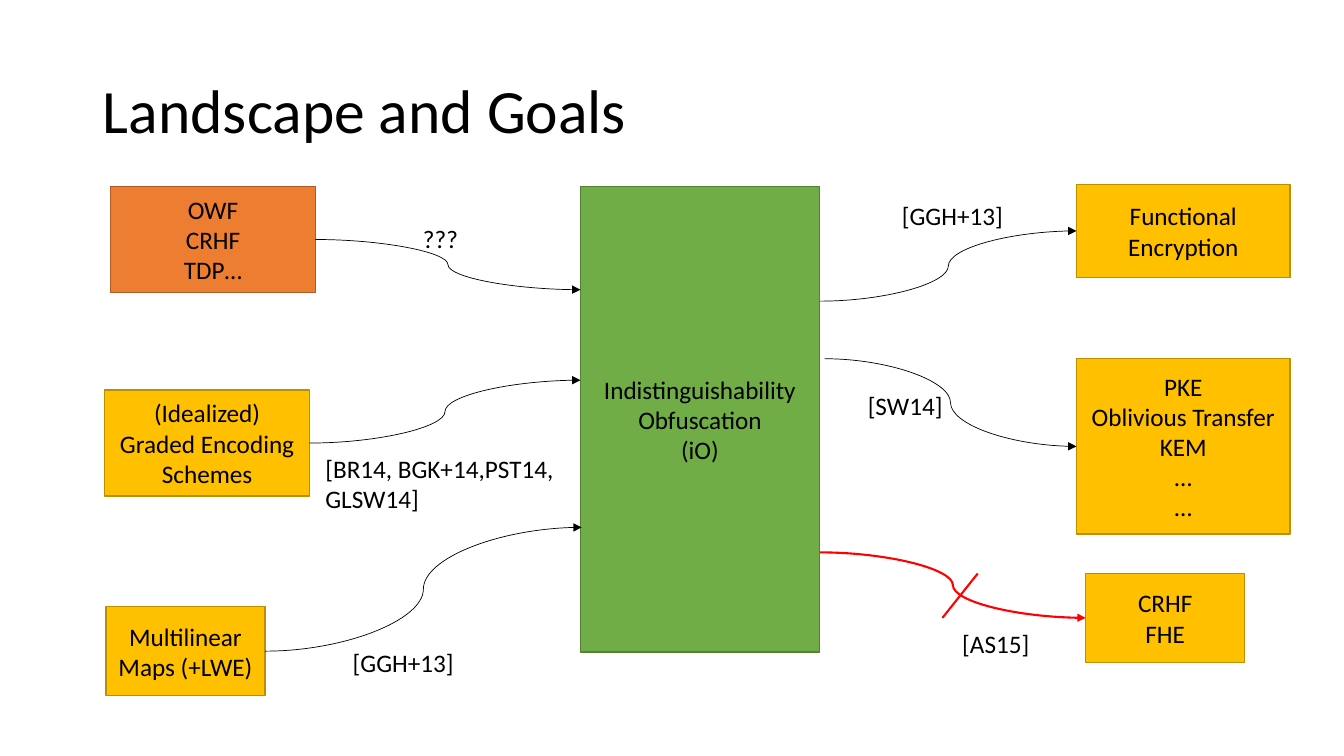
from lxml.etree import SubElement
from pptx import Presentation
from pptx.dml.color import RGBColor
from pptx.enum.shapes import MSO_CONNECTOR, MSO_SHAPE
from pptx.enum.text import MSO_ANCHOR, MSO_AUTO_SIZE, PP_ALIGN
from pptx.oxml.ns import qn
from pptx.util import Cm, Pt

BLACK = RGBColor(0, 0, 0)
RED = RGBColor(0xFF, 0, 0)
GREEN = (RGBColor(0x70, 0xAD, 0x47), RGBColor(0x53, 0x80, 0x35))
GOLD = (RGBColor(0xFF, 0xC0, 0x00), RGBColor(0xBD, 0x8E, 0x00))
ORANGE = (RGBColor(0xED, 0x7D, 0x31), RGBColor(0xAF, 0x5C, 0x24))

TITLE = "Landscape and Goals"
TITLE_AT = (2.34, 1.02, 29.21, 3.68)
CORE = ("Indistinguishability Obfuscation\n(iO)", (14.63, 4.7, 6.02, 11.73), GREEN)

# Box text, place in cm, colours, then the point where its arrow meets the core
SOURCES = [
    ("OWF\nCRHF\nTDP…", (2.79, 4.7, 5.16, 2.67), ORANGE, (14.63, 7.3)),
    ("(Idealized) Graded Encoding Schemes", (2.64, 9.83, 5.16, 2.67), GOLD, (14.63, 9.58)),
    ("Multilinear Maps (+LWE)", (2.67, 15.29, 4.01, 2.24), GOLD, (14.66, 13.29)),
]
GOALS = [
    ("Functional Encryption", (27.13, 4.65, 5.38, 2.34), GOLD, (20.67, 7.59)),
    ("PKE\nOblivious Transfer\nKEM\n…\n…", (27.13, 9.04, 5.38, 4.42), GOLD, (20.78, 9.04)),
]
BARRED = ("CRHF\nFHE", (27.36, 14.45, 4.01, 2.24), GOLD, (20.67, 13.92))
SLASH = ((24.64, 14.45), (23.75, 15.57))

LABELS = [
    ("???", (10.41, 5.51, 3.28, 1.03)),
    ("[BR14, BGK+14,PST14, GLSW14]", (7.95, 11.3, 7.16, 1.8)),
    ("[GGH+13]", (8.64, 16.18, 3.28, 1.03)),
    ("[GGH+13]", (22.48, 4.93, 3.28, 1.03)),
    ("[SW14]", (21.62, 9.7, 3.28, 1.03)),
    ("[AS15]", (24, 15.72, 2.36, 1.03)),
]


def cms(nums):
    """Turn plain numbers into centimetre lengths."""
    return [Cm(n) for n in nums]


def write(shape, text, size=18, align=PP_ALIGN.LEFT):
    frame = shape.text_frame
    frame.text = text
    frame.word_wrap = True
    for para in frame.paragraphs:
        para.alignment = align
        for run in para.runs:
            run.font.name = "Calibri"
            run.font.size = Pt(size)
            run.font.color.rgb = BLACK
    return frame


def add_box(slide, text, place, tint):
    box = slide.shapes.add_shape(MSO_SHAPE.RECTANGLE, *cms(place))
    box.shadow.inherit = False
    box.fill.solid()
    box.fill.fore_color.rgb, box.line.color.rgb = tint
    box.line.width = Pt(1)
    write(box, text, align=PP_ALIGN.CENTER).vertical_anchor = MSO_ANCHOR.MIDDLE
    return box


def add_line(slide, kind, start, end, color, width):
    line = slide.shapes.add_connector(kind, *cms(start + end))
    line.line.color.rgb = color
    line.line.width = Pt(width)
    SubElement(line._element.spPr, qn("a:effectLst"))
    return line


def add_arrow(slide, start, end, color=BLACK, width=0.5):
    arrow = add_line(slide, MSO_CONNECTOR.CURVE, start, end, color, width)
    SubElement(arrow.line._get_or_add_ln(), qn("a:tailEnd"), type="triangle")
    return arrow


def add_source(slide, text, place, tint, meet):
    box = add_box(slide, text, place, tint)
    left, top, width, height = place
    arrow = add_arrow(slide, (left + width, top + height / 2), meet)
    arrow.begin_connect(box, 3)


def add_goal(slide, text, place, tint, meet, color=BLACK, width=0.5):
    box = add_box(slide, text, place, tint)
    left, top, _, height = place
    arrow = add_arrow(slide, meet, (left, top + height / 2), color, width)
    arrow.end_connect(box, 1)


def main():
    deck = Presentation()
    deck.slide_width, deck.slide_height = cms((33.87, 19.05))
    slide = deck.slides.add_slide(deck.slide_layouts[5])

    title = slide.shapes.title
    title.left, title.top, title.width, title.height = cms(TITLE_AT)
    frame = write(title, TITLE, 44)
    frame.auto_size = MSO_AUTO_SIZE.NONE
    frame.vertical_anchor = MSO_ANCHOR.MIDDLE
    frame.paragraphs[0].line_spacing = 0.9

    add_box(slide, *CORE)
    for source in SOURCES:
        add_source(slide, *source)
    for goal in GOALS:
        add_goal(slide, *goal)
    add_goal(slide, *BARRED, color=RED, width=1.5)
    add_line(slide, MSO_CONNECTOR.STRAIGHT, *SLASH, RED, 1.5)

    for text, place in LABELS:
        write(slide.shapes.add_textbox(*cms(place)), text)

    deck.save("out.pptx")


if __name__ == "__main__":
    main()
